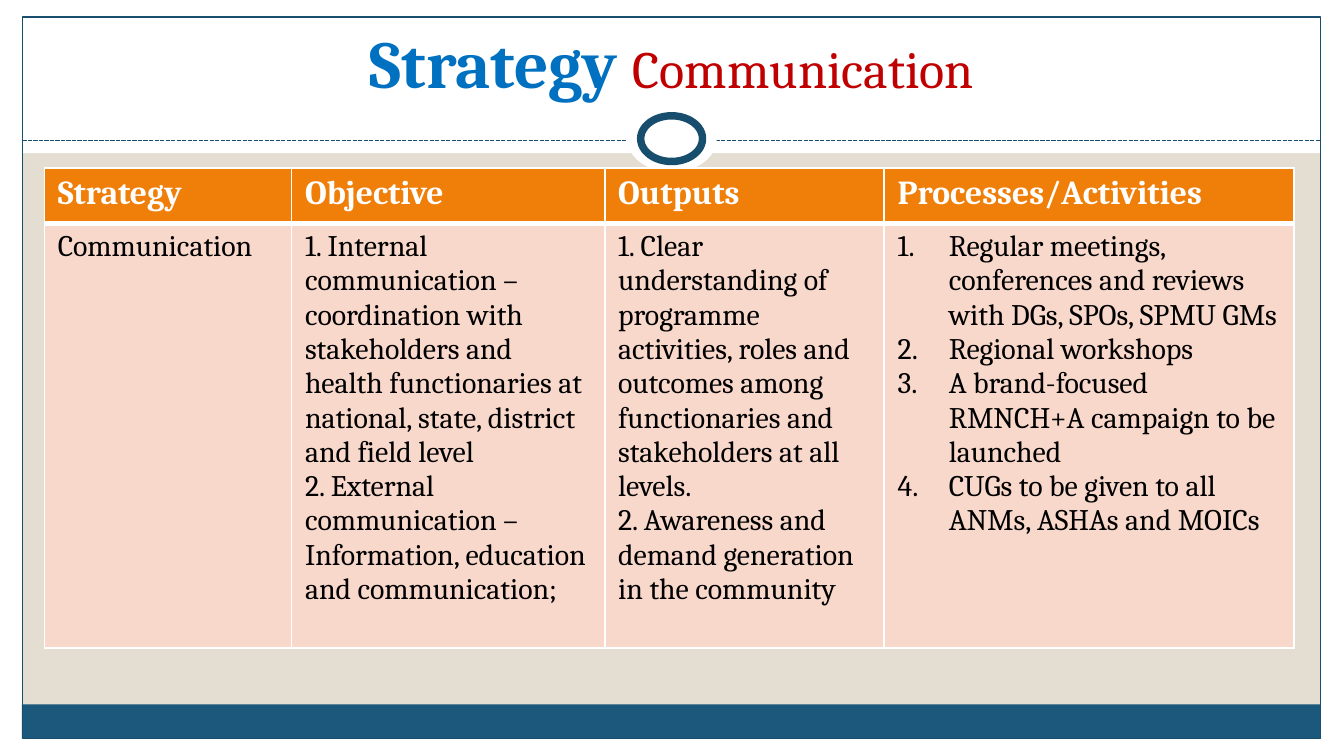
from lxml import etree
from pptx import Presentation, util as u
from pptx.dml.color import RGBColor
from pptx.enum import dml, shapes, text
from pptx.oxml import ns

WHITE = RGBColor(0xFF, 0xFF, 0xFF)
BLACK = RGBColor(0, 0, 0)
SAND = RGBColor(0xE3, 0xDE, 0xD1)
NAVY = RGBColor(0x18, 0x4E, 0x6D)
TEAL = RGBColor(0x1B, 0x58, 0x7C)
BLUE = RGBColor(0x00, 0x70, 0xC0)
RED = RGBColor(0xC0, 0x00, 0x00)
ORANGE = RGBColor(0xF0, 0x7F, 0x09)
PINK = RGBColor(0xF9, 0xD8, 0xCC)
FACE = "Cambria"
HEADS = ["Strategy", "Objective", "Outputs", "Processes/Activities"]
BODY = [
    ["Communication"],
    ["1. Internal communication – coordination with stakeholders and health "
     "functionaries at national, state, district and field level",
     "2. External communication – Information, education and communication;"],
    ["1. Clear understanding of programme activities, roles and outcomes among "
     "functionaries and stakeholders at all levels.",
     "2. Awareness and demand generation in the community"],
    ["Regular meetings, conferences and reviews with DGs, SPOs, SPMU GMs",
     "Regional workshops",
     "A brand-focused RMNCH+A campaign to be launched",
     "CUGs to be given to all ANMs, ASHAs and MOICs"],
]
COLS = [1.84, 2.33, 2.08, 3.05]
ROWS = [0.41, 3.16]


def part(box, left, top, wide, high):
    """Return the part of a box given in percent of its size."""
    x, y, w, h = box
    return (int(x + w * left / 100), int(y + h * top / 100),
            int(w * wide / 100), int(h * high / 100))


def draw(slide, box, fill=None, line=None, width=0.75, kind=shapes.MSO_SHAPE.RECTANGLE):
    """Draw a plain shape filling a box."""
    shape = slide.shapes.add_shape(kind, *box)
    shape.shadow.inherit = False
    if fill is None:
        shape.fill.background()
    else:
        shape.fill.solid()
        shape.fill.fore_color.rgb = fill
    if line is None:
        shape.line.fill.background()
    else:
        shape.line.color.rgb = line
        shape.line.width = u.Pt(width)


def style(run, size, color, bold=False):
    """Set the font of a run."""
    run.font.name = FACE
    run.font.size = u.Pt(size)
    run.font.color.rgb = color
    run.font.bold = bold


def frame(slide, box):
    """Draw the margins, footer band, outline and dashed rule."""
    for edge in [(0, 97.78, 100, 2.22), (0, 0, 100, 20.27),
                 (0, 0, 1.7, 100), (98.3, 0, 1.7, 100)]:
        draw(slide, part(box, *edge), WHITE)
    draw(slide, part(box, 1.63, 93.16, 96.6, 4.5), TEAL)
    draw(slide, part(box, 1.67, 2.27, 96.6, 95.47), line=NAVY)
    x, y, w, h = part(box, 1.67, 18.63, 96.6, 0)
    rule = slide.shapes.add_connector(shapes.MSO_CONNECTOR.STRAIGHT, x, y, x + w, y)
    rule.line.color.rgb = NAVY
    rule.line.width = u.Pt(0.75)
    rule.line.dash_style = dml.MSO_LINE.SQUARE_DOT
    etree.SubElement(rule._element.spPr, ns.qn("a:effectLst"))


def ring(slide, box):
    """Draw the ring and its white halo."""
    oval = shapes.MSO_SHAPE.OVAL
    draw(slide, box, WHITE, kind=oval)
    draw(slide, part(box, 15, 16, 69, 68), WHITE, NAVY, 4, oval)


def title(slide, box):
    """Write the two-colour title."""
    body = slide.shapes.add_textbox(*box).text_frame
    body.word_wrap = True
    body.vertical_anchor = text.MSO_ANCHOR.BOTTOM
    para = body.paragraphs[0]
    para.alignment = text.PP_ALIGN.CENTER
    for words, size, color, bold in [("Strategy ", 36, BLUE, True),
                                     ("Communication", 28, RED, False)]:
        run = para.add_run()
        run.text = words
        style(run, size, color, bold)


def border(cell, top, base):
    """Give a cell white borders with the top and bottom widths in points."""
    props = cell._tc.get_or_add_tcPr()
    for tag, width in [("a:lnL", 1), ("a:lnR", 1), ("a:lnT", top), ("a:lnB", base)]:
        line = etree.SubElement(props, ns.qn(tag), w=str(u.Pt(width)))
        fill = etree.SubElement(line, ns.qn("a:solidFill"))
        etree.SubElement(fill, ns.qn("a:srgbClr"), val=str(WHITE))


def number(para):
    """Make a paragraph an item of a numbered list."""
    props = para._p.get_or_add_pPr()
    props.set("marL", str(u.Inches(0.38)))
    props.set("indent", str(-u.Inches(0.38)))
    etree.SubElement(props, ns.qn("a:buFont"), typeface="+mj-lt")
    etree.SubElement(props, ns.qn("a:buAutoNum"), type="arabicPeriod")


def grid(slide, box):
    """Build the strategy table."""
    table = slide.shapes.add_table(len(ROWS), len(COLS), *box).table
    for col, share in zip(table.columns, COLS):
        col.width = int(box[2] * share / sum(COLS))
    for row, share in zip(table.rows, ROWS):
        row.height = int(box[3] * share / sum(ROWS))
    looks = [([[head] for head in HEADS], ORANGE, 18, WHITE, True, 1, 3),
             (BODY, PINK, 16, BLACK, False, 3, 1)]
    for r, (items, fill, size, color, bold, top, base) in enumerate(looks):
        for c, lines in enumerate(items):
            cell = table.cell(r, c)
            border(cell, top, base)
            cell.fill.solid()
            cell.fill.fore_color.rgb = fill
            cell.text_frame.text = "\n".join(lines)
            for para in cell.text_frame.paragraphs:
                if len(lines) > 2:
                    number(para)
                style(para.runs[0], size, color, bold)


def main():
    """Build and save the slide."""
    deck = Presentation()
    deck.slide_width, deck.slide_height = u.Pt(720), u.Pt(405)
    slide = deck.slides.add_slide(deck.slide_layouts[6])
    slide.background.fill.solid()
    slide.background.fill.fore_color.rgb = SAND
    page = (0, 0, deck.slide_width, deck.slide_height)
    frame(slide, page)
    ring(slide, part(page, 46.67, 13.9, 6.67, 8.89))
    title(slide, part(page, 3.33, 3.38, 93.33, 11.02))
    grid(slide, part(page, 3.3, 22.22, 93, 63.47))
    deck.save("out.pptx")


if __name__ == "__main__":
    main()
